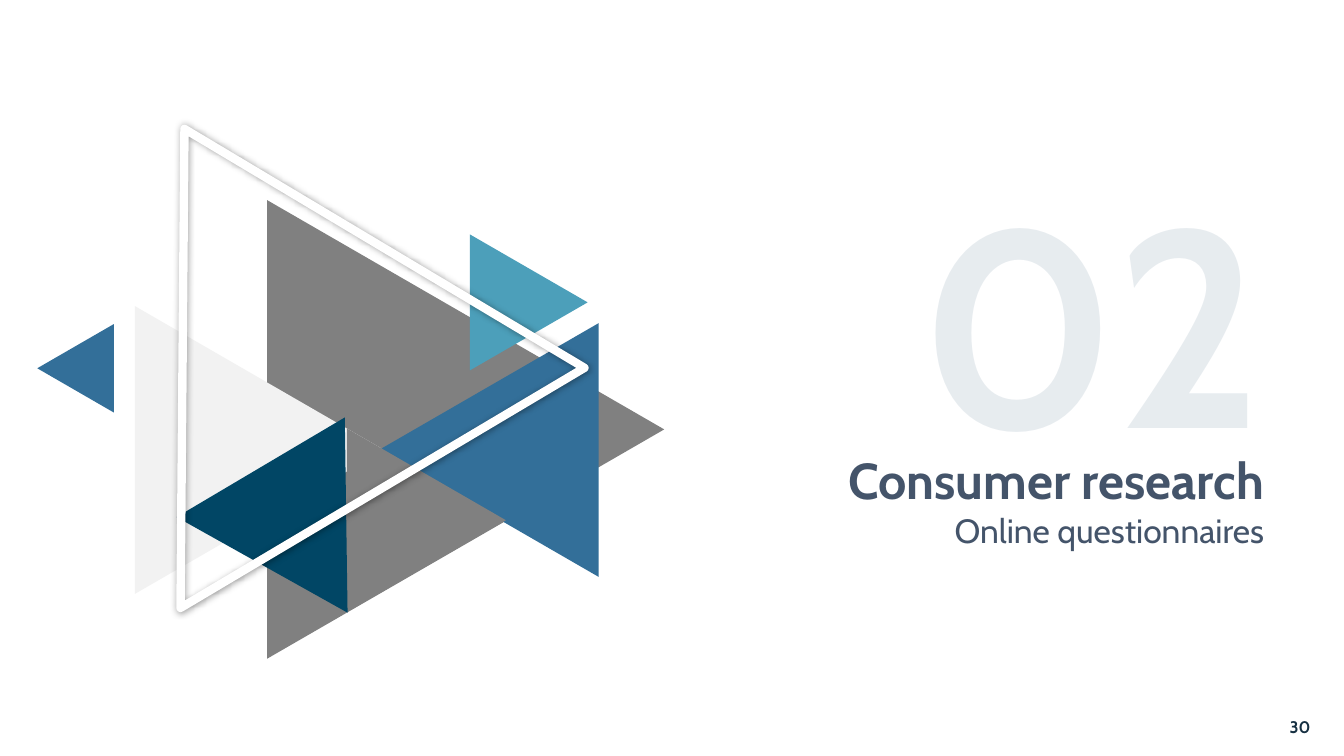
from math import sqrt

from lxml.etree import SubElement
from pptx import Presentation
from pptx.dml.color import RGBColor
from pptx.enum.text import MSO_ANCHOR as Anchor, MSO_AUTO_SIZE as AutoSize, PP_ALIGN as Align
from pptx.oxml.ns import qn
from pptx.util import Cm, Pt

FONT = "Cabin"
COLORS = {
    "gray": "808080",
    "light": "F2F2F2",
    "blue": "336F99",
    "teal": "4C9FBA",
    "navy": "014665",
    "white": "FFFFFF",
    "number": "265373",
    "title": "44546A",
    "page": "163042",
    "shadow": "000000",
}
FLAT_TRIANGLES = [
    ("gray", 6.73, 16.74, 10.82),
    ("light", 3.4, 9.68, 11.34),
    ("blue", 15.09, 9.55, 11.34),
    ("blue", 2.87, 0.94, 9.28),
    ("teal", 11.84, 14.81, 7.62),
    ("gray", 8.74, 12.75, 13.11),
]


def color(name):
    """Return the named colour."""
    return RGBColor.from_string(COLORS[name])


def add_polygon(page, points, fill=None):
    """Draw a closed outline through points in centimetres."""
    start, *rest = [(Cm(x), Cm(y)) for x, y in points]
    builder = page.shapes.build_freeform(*start)
    builder.add_line_segments(rest, close=True)
    shape = builder.convert_to_shape()
    shape.shadow.inherit = False
    shape.line.fill.background()
    if fill:
        shape.fill.solid()
        shape.fill.fore_color.rgb = color(fill)
    else:
        shape.fill.background()
    return shape


def add_side_triangle(page, fill, base_x, tip_x, middle_y):
    """Draw an equilateral triangle with an upright base and a tip to one side."""
    half = abs(tip_x - base_x) / sqrt(3)
    add_polygon(page, [(tip_x, middle_y), (base_x, middle_y + half), (base_x, middle_y - half)], fill)


def add_frame(page, points):
    """Draw a thick white outline with round corners and a soft shadow."""
    frame = add_polygon(page, points)
    frame.line.color.rgb = color("white")
    frame.line.width = Pt(6)
    SubElement(frame.line._get_or_add_ln(), qn("a:round"))
    effects = frame._element.spPr.find(qn("a:effectLst"))
    shadow = SubElement(effects, qn("a:outerShdw"), blurRad=str(Pt(5)), dist="0", dir="0")
    shade = SubElement(shadow, qn("a:srgbClr"), val=COLORS["shadow"])
    SubElement(shade, qn("a:alpha"), val="40000")


def write_text(box, lines, ink, align, anchor=Anchor.TOP):
    """Fill a box with one paragraph for each (text, size, bold) line."""
    frame = box.text_frame
    frame.word_wrap = True
    frame.auto_size = AutoSize.NONE
    frame.vertical_anchor = anchor
    frame.text = "\n".join(text for text, size, bold in lines)
    for para, (text, size, bold) in zip(frame.paragraphs, lines):
        para.alignment = align
        para.space_before = Pt(0)
        para.font.name = FONT
        para.font.size = Pt(size)
        para.font.bold = bold
        para.font.color.rgb = color(ink)


def add_title(page):
    """Place the section title and its subtitle in the title placeholder."""
    title = page.shapes.title
    title.left, title.top, title.width, title.height = Cm(15.04), Cm(11.2), Cm(17.07), Cm(4.37)
    lines = [("Consumer research", 36, True), ("Online questionnaires", 24, False)]
    write_text(title, lines, "title", Align.RIGHT)


def add_section_number(page):
    """Add the large, faint section number."""
    box = page.shapes.add_textbox(Cm(19.35), Cm(4.57), Cm(12.73), Cm(7.95))
    write_text(box, [("02", 200, True)], "number", Align.RIGHT)
    para = box.text_frame.paragraphs[0]
    para.line_spacing = 0.9
    span = para.runs[0]
    span.font.color.rgb = color("number")
    properties = span.font._element
    properties.set("spc", "-150")
    SubElement(properties.find(".//" + qn("a:srgbClr")), qn("a:alpha"), val="11000")


def add_page_number(page):
    """Add the page number in the lower right corner."""
    box = page.shapes.add_textbox(Cm(31.7), Cm(17.63), Cm(2.13), Cm(1.37))
    write_text(box, [("30", 12, True)], "page", Align.CENTER, Anchor.MIDDLE)


def main():
    """Build the section slide and save it."""
    deck = Presentation()
    deck.slide_width, deck.slide_height = Cm(33.87), Cm(19.05)
    page = deck.slides.add_slide(deck.slide_layouts.get_by_name("Title Only"))
    for triangle in FLAT_TRIANGLES:
        add_side_triangle(page, *triangle)
    add_polygon(page, [(8.76, 15.44), (8.69, 10.52), (4.45, 13.03)], "navy")
    add_frame(page, [(4.55, 15.32), (4.65, 3.25), (14.73, 9.27)])
    add_section_number(page)
    add_title(page)
    add_page_number(page)
    deck.save("out.pptx")


if __name__ == "__main__":
    main()
